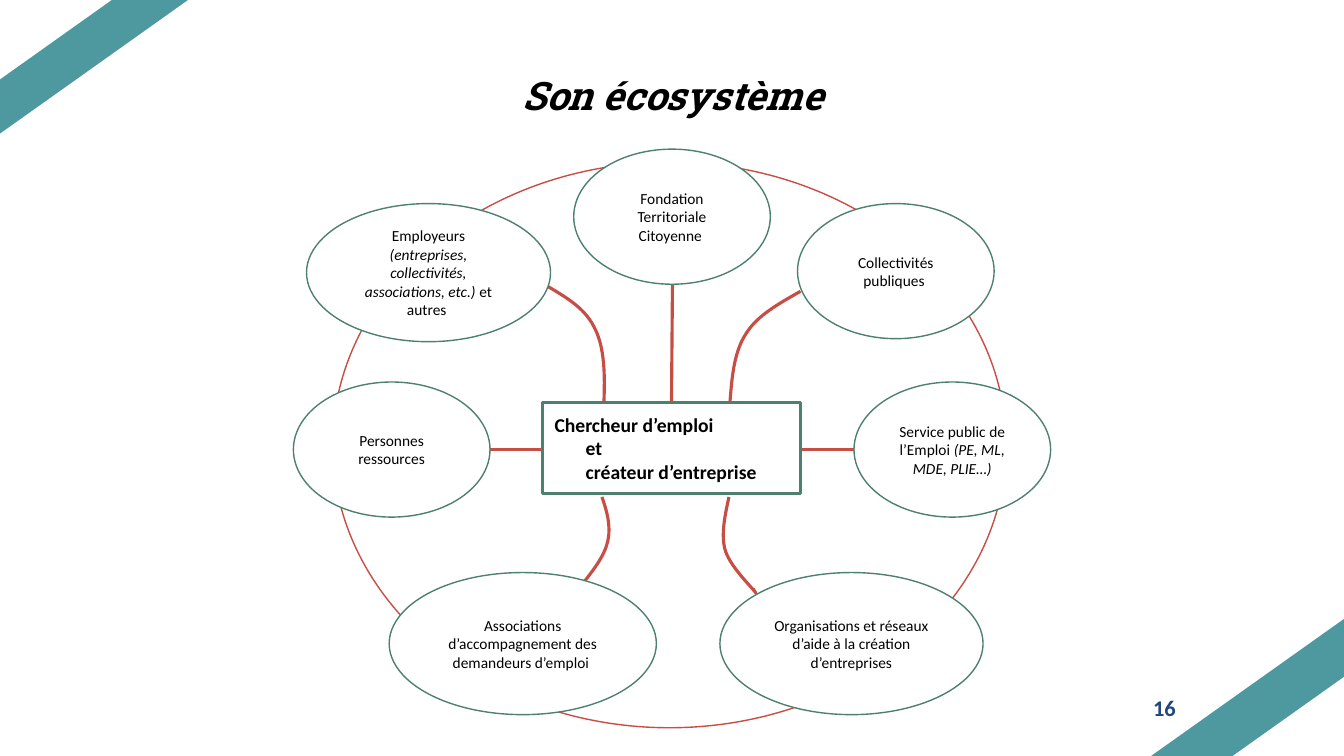
from typing import NamedTuple

from lxml import etree
from pptx import Presentation
from pptx.dml.color import RGBColor
from pptx.enum.shapes import MSO_CONNECTOR, MSO_SHAPE
from pptx.enum.text import MSO_ANCHOR, PP_ALIGN
from pptx.oxml.ns import qn
from pptx.shapes.autoshape import Shape
from pptx.slide import Slide
from pptx.text.text import TextFrame
from pptx.util import Inches, Pt

TEAL = RGBColor(0x4E, 0x98, 0xA0)
GREEN = RGBColor(0x4E, 0x80, 0x6F)
RED = RGBColor(0xC7, 0x4E, 0x45)
NAVY = RGBColor(0x1F, 0x49, 0x7D)
BLACK = RGBColor(0, 0, 0)
WHITE = RGBColor(0xFF, 0xFF, 0xFF)

RECTANGLE, ELLIPSE = MSO_SHAPE.RECTANGLE, MSO_SHAPE.OVAL
STRAIGHT = MSO_CONNECTOR.STRAIGHT
LEFT, CENTER, RIGHT = PP_ALIGN.LEFT, PP_ALIGN.CENTER, PP_ALIGN.RIGHT
TOP, MIDDLE = MSO_ANCHOR.TOP, MSO_ANCHOR.MIDDLE

BODY_FONT, TITLE_FONT = "Calibri", "Roboto Slab"
SPOKE_WIDTH = 2.25
HANGING_INDENT = Inches(0.31)

Point = tuple[float, float]


class Box(NamedTuple):
    left: float
    top: float
    width: float
    height: float

    def lengths(self) -> list[int]:
        return [Inches(value) for value in self]


class Phrase(NamedTuple):
    text: str
    italic: bool = False


class Actor(NamedTuple):
    box: Box
    phrases: list[Phrase]


BANDS = [Box(-0.64, 0.28, 2.89, 0.41), Box(11.2, 6.68, 2.93, 0.44)]
BAND_ANGLE = 324.6
RING = Box(3.3, 1.61, 6.68, 5.61)
JOB_SEEKER = Box(5.38, 3.99, 2.56, 0.91)

ACTORS = [
    Actor(Box(7.14, 5.68, 2.61, 1.41),
          [Phrase("Organisations et réseaux d’aide à la création d’entreprises")]),
    Actor(Box(3.04, 2.02, 2.42, 1.37),
          [Phrase("Employeurs "),
           Phrase("(entreprises, collectivités, associations, etc.)", italic=True),
           Phrase(" et autres ")]),
    Actor(Box(2.91, 3.79, 1.95, 1.34), [Phrase("Personnes ressources")]),
    Actor(Box(5.69, 1.48, 1.95, 1.34), [Phrase("Fondation Territoriale Citoyenne ")]),
    Actor(Box(3.86, 5.68, 2.65, 1.41),
          [Phrase("Associations d’accompagnement des demandeurs d’emploi ")]),
    Actor(Box(8.47, 3.79, 1.95, 1.34),
          [Phrase("Service public de l’Emploi "),
           Phrase("(PE, ML, MDE, PLIE…)", italic=True)]),
    Actor(Box(7.91, 2.02, 1.95, 1.34), [Phrase("Collectivités publiques ")]),
]

STRAIGHT_SPOKES: list[tuple[Point, Point]] = [
    ((6.66, 3.99), (6.67, 2.81)),
    ((7.94, 4.46), (8.47, 4.46)),
    ((5.38, 4.46), (4.86, 4.46)),
]

# Each curve is a start point, then two control points and an end per segment.
CURVED_SPOKES: list[list[Point]] = [
    [(5.99, 3.99), (6, 3.72), (6, 3.44), (5.89, 3.24),
     (5.79, 3.04), (5.58, 2.93), (5.38, 2.81)],
    [(7.24, 3.99), (7.26, 3.74), (7.28, 3.49), (7.4, 3.31),
     (7.51, 3.13), (7.73, 3.01), (7.94, 2.89)],
    [(5.97, 4.93), (6.02, 5.07), (6.06, 5.22), (6.03, 5.36),
     (6, 5.51), (5.89, 5.65), (5.78, 5.79)],
    [(7.23, 4.93), (7.19, 5.11), (7.15, 5.3), (7.19, 5.45),
     (7.23, 5.6), (7.42, 5.79), (7.47, 5.85),
     (7.52, 5.91), (7.49, 5.88), (7.47, 5.84)],
]


def write(frame: TextFrame, phrases: list[Phrase], *, size: float,
          font: str = BODY_FONT, color: RGBColor = BLACK, bold: bool = False,
          align: PP_ALIGN = CENTER, anchor: MSO_ANCHOR = MIDDLE,
          spacing: float = 0, side_margin: float = 0.1) -> None:
    frame.word_wrap = True
    frame.vertical_anchor = anchor
    frame.margin_left = frame.margin_right = Inches(side_margin)
    paragraph = frame.paragraphs[0]
    paragraph.alignment = align
    paragraph.space_before = paragraph.space_after = Pt(spacing)
    for phrase in phrases:
        for index, line in enumerate(phrase.text.split("\n")):
            if index:
                paragraph.add_line_break()
            run = paragraph.add_run()
            run.text = line
            run.font.name, run.font.size = font, Pt(size)
            run.font.bold, run.font.italic = bold, phrase.italic
            run.font.color.rgb = color


def style(shape: Shape, line: RGBColor, width: float,
          fill: RGBColor | None = None) -> None:
    shape.shadow.inherit = False
    shape.line.color.rgb = line
    shape.line.width = Pt(width)
    if fill is None:
        shape.fill.background()
    else:
        shape.fill.solid()
        shape.fill.fore_color.rgb = fill


def add_figure(slide: Slide, kind: MSO_SHAPE, box: Box, line: RGBColor,
               width: float, fill: RGBColor | None = None) -> Shape:
    shape = slide.shapes.add_shape(kind, *box.lengths())
    style(shape, line, width, fill)
    return shape


def add_straight_spoke(slide: Slide, start: Point, end: Point) -> None:
    spoke = slide.shapes.add_connector(
        STRAIGHT, *(Inches(value) for value in start + end))
    spoke.line.color.rgb = RED
    spoke.line.width = Pt(SPOKE_WIDTH)
    etree.SubElement(spoke._element.spPr, qn("a:effectLst"))


def add_curved_spoke(slide: Slide, points: list[Point]) -> None:
    """Lay line segments between the curve's ends, then bend each into a Bézier."""
    places = [(Inches(x), Inches(y)) for x, y in points]
    builder = slide.shapes.build_freeform(*places[0])
    builder.add_line_segments(places[3::3], close=False)
    spoke = builder.convert_to_shape()
    style(spoke, RED, SPOKE_WIDTH)
    segments = list(spoke._element.iter(qn("a:lnTo")))
    for index, segment in enumerate(segments):
        segment.clear()
        curve = etree.SubElement(segment.getparent(), qn("a:cubicBezTo"))
        segment.getparent().replace(segment, curve)
        for x, y in places[3 * index + 1:3 * index + 4]:
            etree.SubElement(curve, qn("a:pt"),
                             x=str(x - spoke.left), y=str(y - spoke.top))


def add_job_seeker(slide: Slide) -> None:
    seeker = add_figure(slide, RECTANGLE, JOB_SEEKER, GREEN, SPOKE_WIDTH, WHITE)
    write(seeker.text_frame,
          [Phrase("Chercheur d’emploi\net\ncréateur d’entreprise")],
          size=14, bold=True, align=LEFT, spacing=5, side_margin=0.12)
    properties = seeker.text_frame.paragraphs[0]._p.get_or_add_pPr()
    properties.set("marL", str(HANGING_INDENT))
    properties.set("indent", str(-HANGING_INDENT))


def main() -> None:
    deck = Presentation()
    deck.slide_width, deck.slide_height = Inches(13.33), Inches(7.5)
    slide = deck.slides.add_slide(deck.slide_layouts[6])

    for box in BANDS:
        add_figure(slide, RECTANGLE, box, TEAL, 2, TEAL).rotation = BAND_ANGLE

    add_figure(slide, ELLIPSE, RING, RED, 1)
    for points in CURVED_SPOKES:
        add_curved_spoke(slide, points)
    for start, end in STRAIGHT_SPOKES:
        add_straight_spoke(slide, start, end)
    for actor in ACTORS:
        bubble = add_figure(slide, ELLIPSE, actor.box, GREEN, 1, WHITE)
        write(bubble.text_frame, actor.phrases, size=11, spacing=5, side_margin=0.12)
    add_job_seeker(slide)

    title = slide.shapes.add_textbox(*Box(2.95, 0.66, 7.44, 0.57).lengths())
    write(title.text_frame, [Phrase("Son écosystème", italic=True)],
          size=28, font=TITLE_FONT, bold=True, anchor=TOP)
    page_number = slide.shapes.add_textbox(*Box(8.65, 6.82, 3.11, 0.4).lengths())
    write(page_number.text_frame, [Phrase("16")],
          size=16, color=NAVY, bold=True, align=RIGHT)

    deck.save("out.pptx")


if __name__ == "__main__":
    main()
